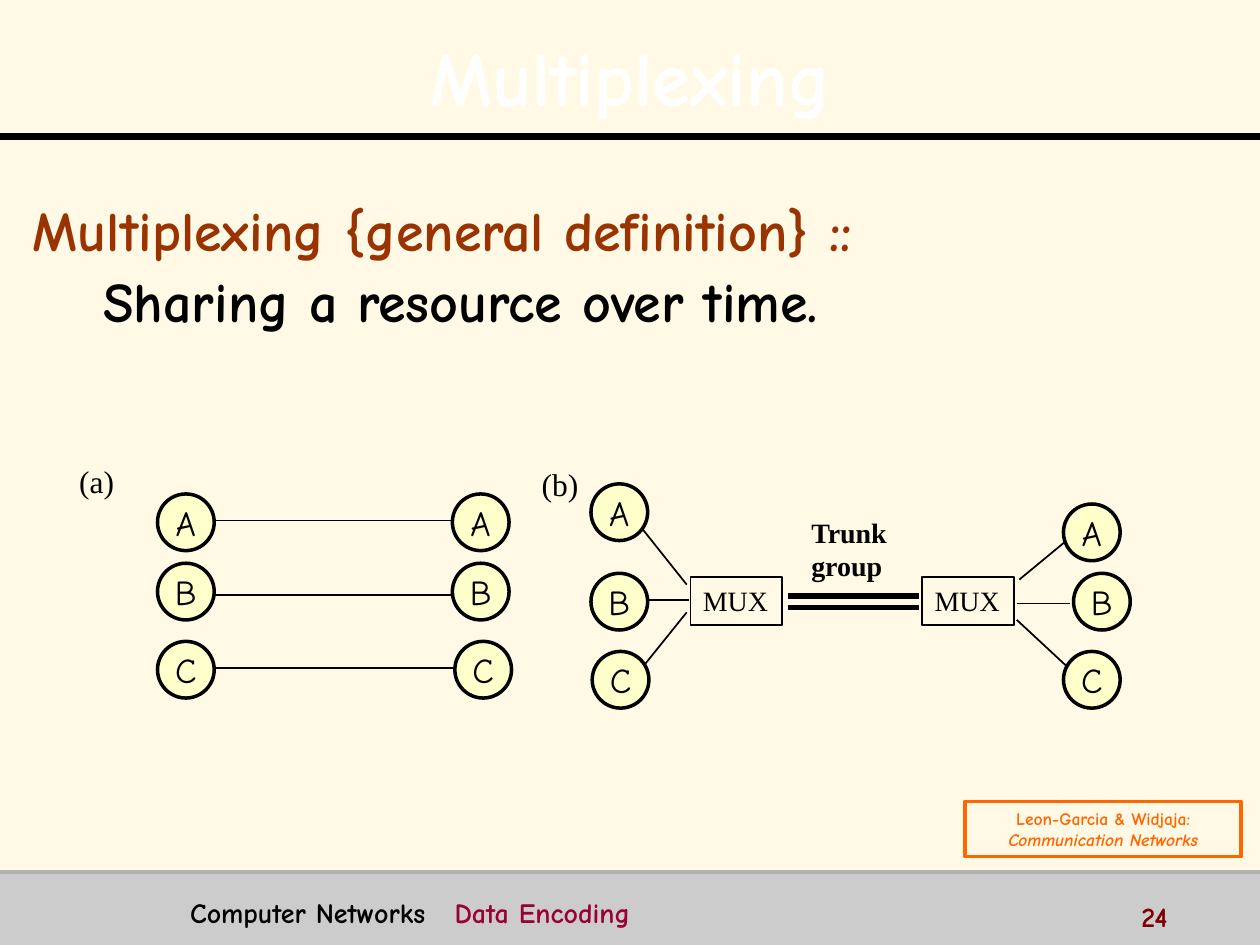
from lxml.etree import SubElement
from pptx import Presentation
from pptx.dml.color import RGBColor
from pptx.enum.shapes import MSO_CONNECTOR, MSO_SHAPE
from pptx.enum.text import MSO_ANCHOR, MSO_AUTO_SIZE, PP_ALIGN
from pptx.oxml.ns import qn
from pptx.util import Inches, Pt

BLACK = "000000"
ORANGE = "FF6600"


def color(value):
    """Turn a hex string into a colour."""
    return RGBColor.from_string(value)


class SlideBuilder:
    """Hold the lecture style and the slide being built."""

    hand = "Comic Neue"
    serif = "Times New Roman"
    circle_size = 0.45

    def __init__(self, slide, background):
        """Start on a slide with a plain background."""
        self.slide = slide
        slide.background.fill.solid()
        slide.background.fill.fore_color.rgb = color(background)

    def format(self, run, size, ink=BLACK, font=None, bold=False, italic=False):
        """Apply the character format to a run."""
        run.font.size = Pt(size)
        run.font.name = font or self.hand
        run.font.bold = bold
        run.font.italic = italic
        run.font.color.rgb = color(ink)

    def format_all(self, frame, size, align=PP_ALIGN.LEFT, **style):
        """Format every run of a text frame."""
        for paragraph in frame.paragraphs:
            paragraph.alignment = align
            for run in paragraph.runs:
                self.format(run, size, **style)

    def place(self, holder, left, top, width, height):
        """Move a placeholder and stop its text from shrinking."""
        holder.left, holder.top = Inches(left), Inches(top)
        holder.width, holder.height = Inches(width), Inches(height)
        holder.text_frame.auto_size = MSO_AUTO_SIZE.NONE
        return holder.text_frame

    def title(self, text):
        """Fill the title with white text on a black shadow."""
        frame = self.place(self.slide.shapes.title, 0.2, 0.13, 9.61, 0.87)
        frame.text = text
        frame.vertical_anchor = MSO_ANCHOR.MIDDLE
        frame.paragraphs[0].line_spacing = 1.1
        self.format_all(frame, 44, PP_ALIGN.CENTER, ink="FFFFFF", bold=True)
        properties = frame.paragraphs[0].runs[0].font.fill._xPr
        effects = properties.makeelement(qn("a:effectLst"))
        shadow = SubElement(effects, qn("a:outerShdw"), dist="35921", dir="2700000")
        SubElement(shadow, qn("a:srgbClr"), val=BLACK)
        properties.find(qn("a:solidFill")).addnext(effects)

    def definition(self, term, meaning):
        """Fill the body with a term and its indented meaning."""
        frame = self.place(self.slide.placeholders[1], 0.16, 1.56, 9.61, 4.5)
        frame.text = f"{term}\n{meaning}"
        layout = ((0.25, -0.25, 0, "993300"), (0.56, 0, 6.4, BLACK))
        for paragraph, (margin, indent, before, ink) in zip(frame.paragraphs, layout):
            properties = paragraph._p.get_or_add_pPr()
            properties.set("marL", str(Inches(margin)))
            properties.set("indent", str(Inches(indent)))
            SubElement(properties, qn("a:buNone"))
            paragraph.line_spacing = 0.9
            paragraph.space_before = Pt(before)
            self.format(paragraph.runs[0], 32, ink, bold=True)

    def line(self, start, end, weight=1, ink=BLACK):
        """Draw a straight line without shadow."""
        points = [Inches(value) for value in (*start, *end)]
        connector = self.slide.shapes.add_connector(MSO_CONNECTOR.STRAIGHT, *points)
        connector.line.width = Pt(weight)
        connector.line.color.rgb = color(ink)
        SubElement(connector._element.spPr, qn("a:effectLst"))

    def box(self, kind, bounds, fill=None, ink=None, weight=1):
        """Draw a preset shape without shadow."""
        shape = self.slide.shapes.add_shape(kind, *map(Inches, bounds))
        shape.shadow.inherit = False
        if fill:
            shape.fill.solid()
            shape.fill.fore_color.rgb = color(fill)
        else:
            shape.fill.background()
        if ink:
            shape.line.color.rgb = color(ink)
            shape.line.width = Pt(weight)
        else:
            shape.line.fill.background()
        return shape.text_frame

    def label(self, text, bounds, size, wrap=False, **style):
        """Add a text box with one format."""
        frame = self.slide.shapes.add_textbox(*map(Inches, bounds)).text_frame
        frame.word_wrap = wrap
        frame.text = text
        self.format_all(frame, size, **style)
        return frame

    def station(self, name, left, top):
        """Draw a circle for one station."""
        bounds = (left, top, self.circle_size, self.circle_size)
        frame = self.box(MSO_SHAPE.OVAL, bounds, "FFFFCC", BLACK, 2)
        frame.word_wrap = False
        frame.vertical_anchor = MSO_ANCHOR.MIDDLE
        frame.text = name
        self.format_all(frame, 20, PP_ALIGN.CENTER)

    def multiplexer(self, left):
        """Draw a multiplexer box."""
        frame = self.box(MSO_SHAPE.RECTANGLE, (left, 4.58, 0.73, 0.38), ink=BLACK)
        frame.word_wrap = False
        frame.vertical_anchor = MSO_ANCHOR.TOP
        frame.text = "MUX"
        self.format_all(frame, 16, font=self.serif)

    def source(self, authors, book):
        """Add the framed book reference."""
        frame = self.box(MSO_SHAPE.RECTANGLE, (7.66, 6.36, 2.19, 0.44), ink=ORANGE, weight=2)
        frame.word_wrap = True
        frame.vertical_anchor = MSO_ANCHOR.MIDDLE
        frame.text = f"{authors}\n{book}"
        self.format_all(frame, 10, PP_ALIGN.CENTER, ink=ORANGE, bold=True)
        frame.paragraphs[1].runs[0].font.italic = True

    def footer(self, course, topic, number):
        """Draw the grey band with course, topic and page number."""
        self.box(MSO_SHAPE.RECTANGLE, (0, 6.92, 10, 0.58), "CCCCCC")
        self.line((0, 6.92), (10, 6.92), 2, "B2B2B2")
        frame = self.label(f"{course}\t", (1.41, 7.06, 7.28, 0.31), 16, True, bold=True)
        paragraph = frame.paragraphs[0]
        tabs = SubElement(paragraph._p.get_or_add_pPr(), qn("a:tabLst"))
        SubElement(tabs, qn("a:tab"), pos=str(Inches(2.1)), algn="l")
        run = paragraph.add_run()
        run.text = topic
        self.format(run, 16, "990033", bold=True)
        self.label(number, (8.96, 7.09, 1, 0.25), 16, True, ink="800000", bold=True)


def main():
    """Build the multiplexing slide."""
    deck = Presentation()
    deck.slide_width, deck.slide_height = Inches(10), Inches(7.5)
    page = SlideBuilder(deck.slides.add_slide(deck.slide_layouts[1]), "FFF9E6")
    page.footer("Computer Networks", "Data Encoding", "24")
    page.line((0, 1.08), (10, 1.08), 4)
    page.title("Multiplexing")
    page.definition("Multiplexing {general definition} ::", "Sharing a resource over time.")

    for height in (4.13, 4.72, 5.3):
        page.line((1.7, height), (3.6, height))
    links = (
        ((5.1, 4.2), (5.45, 4.64)),
        ((5.1, 4.76), (5.47, 4.76)),
        ((5.08, 5.32), (5.45, 4.86)),
        ((8.09, 4.6), (8.49, 4.27)),
        ((8.07, 4.79), (8.49, 4.79)),
        ((8.07, 4.92), (8.49, 5.31)),
    )
    for start, end in links:
        page.line(start, end)
    for height in (4.73, 4.82):
        page.line((6.25, height), (7.29, height), 3)
    for left in (5.48, 7.32):
        page.multiplexer(left)

    page.label("(a)", (0.53, 3.62, 0.48, 0.4), 18, font=page.serif)
    page.label("(b)", (4.2, 3.64, 0.49, 0.4), 18, font=page.serif)
    page.label("Trunk\ngroup", (6.34, 4.04, 0.81, 0.63), 16, font=page.serif, bold=True)

    columns = (
        ((1.25, 3.92), (1.25, 4.47), (1.25, 5.09)),
        ((3.59, 3.92), (3.59, 4.47), (3.61, 5.09)),
        ((4.69, 3.84), (4.69, 4.55), (4.7, 5.17)),
        ((8.44, 4), (8.52, 4.55), (8.44, 5.17)),
    )
    for column in columns:
        for name, (left, top) in zip("ABC", column):
            page.station(name, left, top)

    page.source("Leon-Garcia & Widjaja:", "Communication Networks")
    deck.save("out.pptx")


if __name__ == "__main__":
    main()
